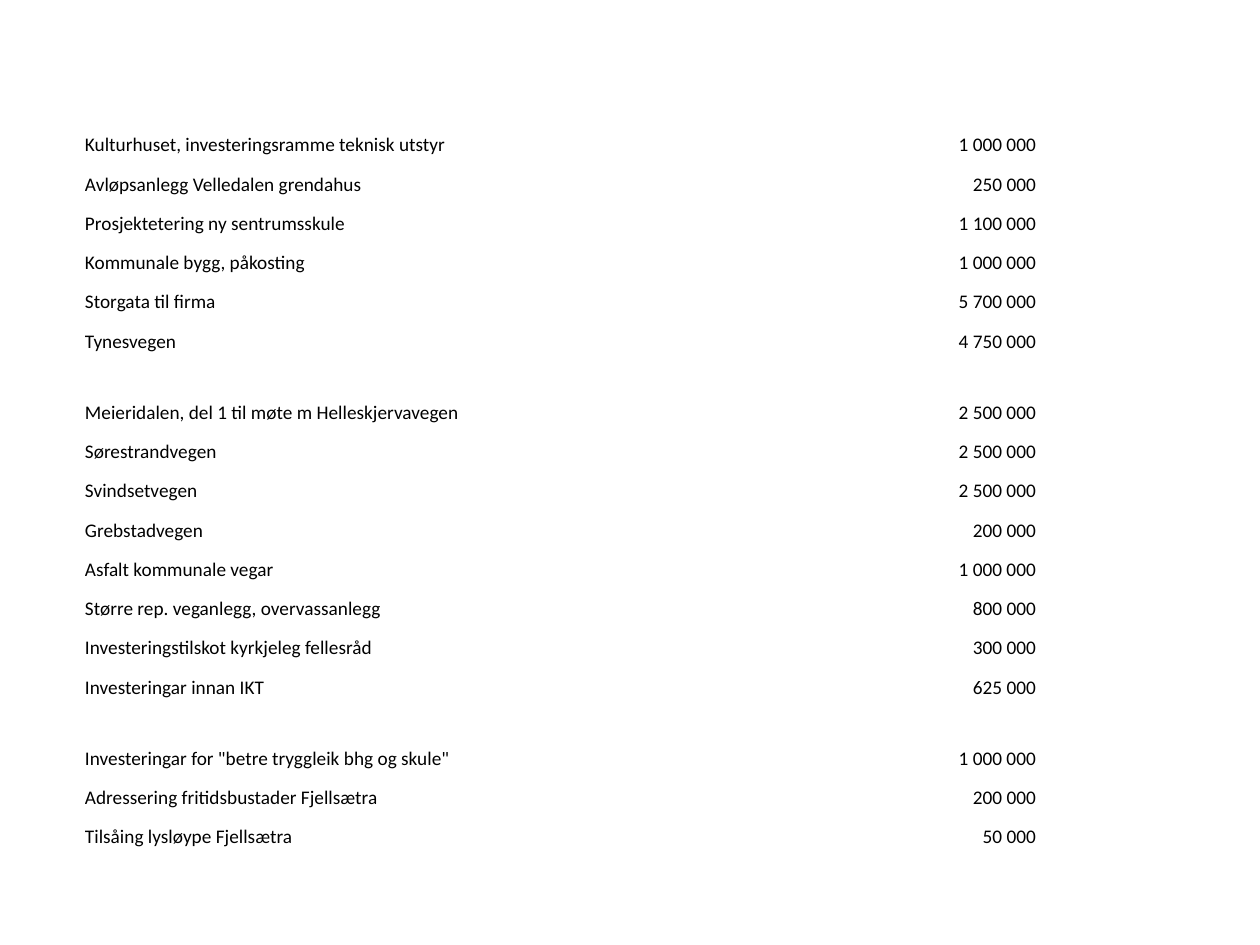
import pptx
import pptx.dml.color
import pptx.enum.text
import pptx.util

PX = 914400 // 126
BLACK = pptx.dml.color.RGBColor(0x00, 0x00, 0x00)
ALIGN = pptx.enum.text.PP_ALIGN

# Each group of investments opens with a taller row
GROUPS = [
    [
        ("Kulturhuset, investeringsramme teknisk utstyr", "1 000 000"),
        ("Avløpsanlegg Velledalen grendahus", "250 000"),
        ("Prosjektetering ny sentrumsskule", "1 100 000"),
        ("Kommunale bygg, påkosting", "1 000 000"),
        ("Storgata til firma", "5 700 000"),
        ("Tynesvegen", "4 750 000"),
    ],
    [
        ("Meieridalen, del 1 til møte m Helleskjervavegen", "2 500 000"),
        ("Sørestrandvegen", "2 500 000"),
        ("Svindsetvegen", "2 500 000"),
        ("Grebstadvegen", "200 000"),
        ("Asfalt kommunale vegar", "1 000 000"),
        ("Større rep. veganlegg, overvassanlegg", "800 000"),
        ("Investeringstilskot kyrkjeleg fellesråd", "300 000"),
        ("Investeringar innan IKT", "625 000"),
    ],
    [
        ('Investeringar for "betre tryggleik bhg og skule"', "1 000 000"),
        ("Adressering fritidsbustader Fjellsætra", "200 000"),
        ("Tilsåing lysløype Fjellsætra", "50 000"),
        ("", ""),
    ],
]


def px(length):
    return length * PX


COLUMN_WIDTHS = [px(721), px(232)]
OPENING_HEIGHT = px(71)
ROW_HEIGHT = px(118) // 3  # three plain rows share 118 px

CELL_FORMAT = {
    "vertical_anchor": pptx.enum.text.MSO_ANCHOR.BOTTOM,
    "margin_left": px(1),
    "margin_right": px(1),
    "margin_top": px(1),
    "margin_bottom": 0,
}
FONT_FORMAT = {"name": "Calibri", "size": pptx.util.Pt(11)}


def apply_format(target, values):
    for attribute, value in values.items():
        setattr(target, attribute, value)


def fill_cell(cell, text, alignment):
    cell.fill.background()
    apply_format(cell, CELL_FORMAT)
    paragraph = cell.text_frame.paragraphs[0]
    paragraph.alignment = alignment
    if text:
        run = paragraph.add_run()
        run.text = text
        font = run.font
    else:
        font = paragraph.font
    apply_format(font, FONT_FORMAT)
    font.color.rgb = BLACK


def add_investment_table(slide, left, top):
    investments = [row for group in GROUPS for row in group]
    heights = [
        OPENING_HEIGHT if index == 0 else ROW_HEIGHT
        for group in GROUPS
        for index in range(len(group))
    ]
    table = slide.shapes.add_table(
        len(investments), len(COLUMN_WIDTHS), left, top,
        sum(COLUMN_WIDTHS), sum(heights),
    ).table
    apply_format(table, {"first_row": False, "horz_banding": False})
    for column, width in zip(table.columns, COLUMN_WIDTHS):
        column.width = width
    for row, height, (purpose, amount) in zip(table.rows, heights, investments):
        row.height = height
        fill_cell(row.cells[0], purpose, ALIGN.LEFT)
        fill_cell(row.cells[1], amount, ALIGN.RIGHT)


def main():
    presentation = pptx.Presentation()
    presentation.slide_width = px(1260)
    presentation.slide_height = px(945)
    slide = presentation.slides.add_slide(presentation.slide_layouts[6])

    # Investment list with amounts
    add_investment_table(slide, px(84), px(86))

    presentation.save("out.pptx")


if __name__ == "__main__":
    main()
